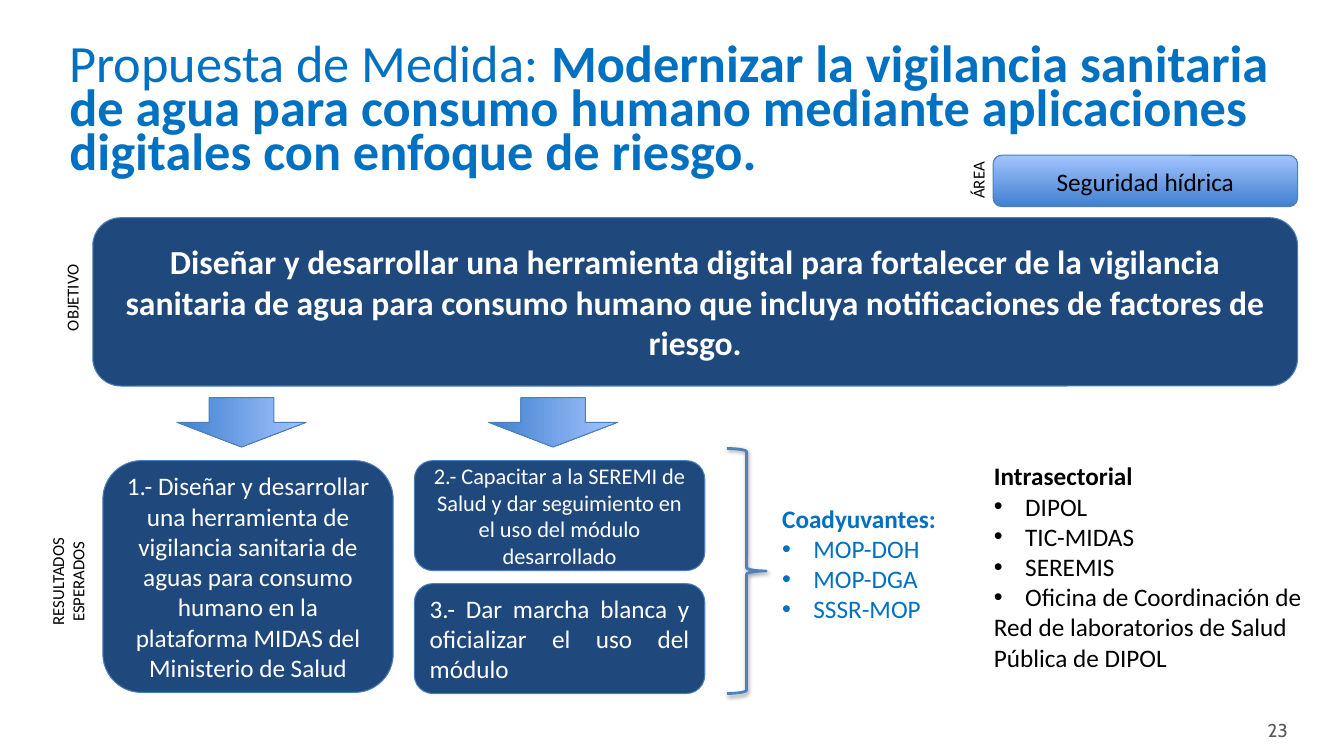
from lxml import etree
from pptx import Presentation
from pptx.dml.color import RGBColor
from pptx.enum.shapes import MSO_SHAPE as Shape
from pptx.enum.text import MSO_ANCHOR as Anchor, MSO_AUTO_SIZE as Auto, PP_ALIGN as Align
from pptx.oxml.ns import qn
from pptx.util import Pt

PX = 9144  # 100 px to the inch
NAVY = RGBColor(0x1F, 0x49, 0x7D)
EDGE = RGBColor(0x4B, 0x7E, 0xBC)
BRACE = RGBColor(0x4F, 0x81, 0xBD)
DEEP = RGBColor(0x3F, 0x80, 0xCE)
PALE = RGBColor(0xA4, 0xC4, 0xFF)
BLUE = RGBColor(0x00, 0x70, 0xC0)
GRAY = RGBColor(0x59, 0x59, 0x59)
BLACK = RGBColor(0, 0, 0)
WHITE = RGBColor(255, 255, 255)

deck = Presentation()
deck.slide_width, deck.slide_height = 1333 * PX, 750 * PX
slide = deck.slides.add_slide(deck.slide_layouts[6])


def write(item, text, size, color, align=Align.LEFT, bold=False,
          anchor=Anchor.MIDDLE, wrap=True, font="Calibri"):
    """Fill a shape with text, one paragraph per line."""
    frame = item.text_frame
    frame.text = text
    frame.word_wrap = wrap
    frame.vertical_anchor = anchor
    for para in frame.paragraphs:
        para.alignment = align
        for run in para.runs:
            run.font.name, run.font.size = font, Pt(size)
            run.font.bold = bold
            run.font.color.rgb = color
    return frame


def block(kind, box, glow=False):
    """Add an outlined shape, navy or with a gradient."""
    item = slide.shapes.add_shape(kind, *[n * PX for n in box])
    item.shadow.inherit = False
    item.line.color.rgb, item.line.width = EDGE, Pt(0.75)
    if glow:
        item.fill.gradient()
        item.fill.gradient_angle = 90
        for stop, color in zip(item.fill.gradient_stops, (DEEP, PALE)):
            stop.color.rgb, stop.position = color, float(color == PALE)
    else:
        item.fill.solid()
        item.fill.fore_color.rgb = NAVY
    return item


# Title
title = slide.shapes.add_textbox(59 * PX, 40 * PX, 1228 * PX, 145 * PX)
lead = "Propuesta de Medida: "
frame = write(title, lead, 37.4, BLUE)
para = frame.paragraphs[0]
para.line_spacing = 0.7
run = para.add_run()
run.text = ("Modernizar la vigilancia sanitaria de agua para consumo humano "
            "mediante aplicaciones digitales con enfoque de riesgo.")
run.font.name, run.font.size, run.font.bold = "Calibri", Pt(37.4), True
run.font.color.rgb = BLUE

# Area, objective and expected results
boxes = [
    ((985, 154, 302, 51), "Seguridad hídrica", 18, BLACK, Align.CENTER),
    ((92, 216, 1195, 167),
     "Diseñar y desarrollar una herramienta digital para fortalecer de la "
     "vigilancia sanitaria de agua para consumo humano que incluya "
     "notificaciones de factores de riesgo.", 24, WHITE, Align.CENTER),
    ((102, 457, 288, 230),
     "1.- Diseñar y desarrollar una herramienta de vigilancia sanitaria de "
     "aguas para consumo humano en la plataforma MIDAS del Ministerio de Salud",
     18, WHITE, Align.CENTER),
    ((411, 457, 288, 109),
     "2.- Capacitar a la SEREMI de Salud y dar seguimiento en el uso del "
     "módulo desarrollado", 16, WHITE, Align.CENTER),
    ((411, 579, 288, 109),
     "3.- Dar marcha blanca y oficializar el uso del módulo",
     18, WHITE, Align.JUSTIFY),
]
for box, text, size, color, align in boxes:
    item = block(Shape.ROUNDED_RECTANGLE, box, glow=color == BLACK)
    write(item, text, size, color, align, bold=size == 24)

for left in (215, 524):
    arrow = block(Shape.RIGHT_ARROW, (left, 355, 49, 128), glow=True)
    arrow.rotation = 90

# Brace with a soft shadow
brace = block(Shape.RIGHT_BRACE, (721, 445, 39, 243))
brace.fill.background()
brace.line.color.rgb, brace.line.width = BRACE, Pt(2)
glow = brace._element.spPr.find(qn("a:effectLst"))
shade = etree.SubElement(glow, qn("a:outerShdw"), blurRad="40000", dist="20000",
                         dir="5400000", rotWithShape="0")
tint = etree.SubElement(shade, qn("a:srgbClr"), val="000000")
etree.SubElement(tint, qn("a:alpha"), val="38000")

# Partner lists: heading, bullets, then plain lines
lists = [
    ((766, 444, 324, 230), "Coadyuvantes:\nMOP-DOH\nMOP-DGA\nSSSR-MOP",
     BLUE, Anchor.MIDDLE, True, 3),
    ((976, 452, 335, 252),
     "Intrasectorial\nDIPOL\nTIC-MIDAS\nSEREMIS\nOficina de Coordinación de\n"
     "Red de laboratorios de Salud\nPública de DIPOL",
     BLACK, Anchor.TOP, False, 4),
]
for box, text, color, anchor, wrap, count in lists:
    item = slide.shapes.add_textbox(*[n * PX for n in box])
    frame = write(item, text, 18, color, anchor=anchor, wrap=wrap)
    frame.paragraphs[0].runs[0].font.bold = True
    for para in frame.paragraphs[1:count + 1]:
        props = para._p.get_or_add_pPr()
        props.set("marL", str(31 * PX))
        props.set("indent", str(-31 * PX))
        etree.SubElement(props, qn("a:buFont"), typeface="Arial")
        etree.SubElement(props, qn("a:buChar"), char="•")

# Side labels and page number
labels = [
    ((938, 168, 64, 30), "ÁREA", Align.RIGHT, True),
    ((28, 281, 87, 30), "OBJETIVO", Align.RIGHT, False),
    ((13, 552, 108, 50), "RESULTADOS\nESPERADOS", Align.CENTER, False),
]
for box, text, align, wrap in labels:
    item = slide.shapes.add_textbox(*[n * PX for n in box])
    item.rotation = 270
    frame = write(item, text, 12, BLACK, align, anchor=Anchor.TOP, wrap=wrap)
    frame.auto_size = Auto.SHAPE_TO_FIT_TEXT

page = slide.shapes.add_textbox(1239 * PX, 708 * PX, 48 * PX, 33 * PX)
write(page, "23", 13.3, GRAY, Align.RIGHT, anchor=Anchor.TOP, wrap=False, font="Cabin")

deck.save("out.pptx")
